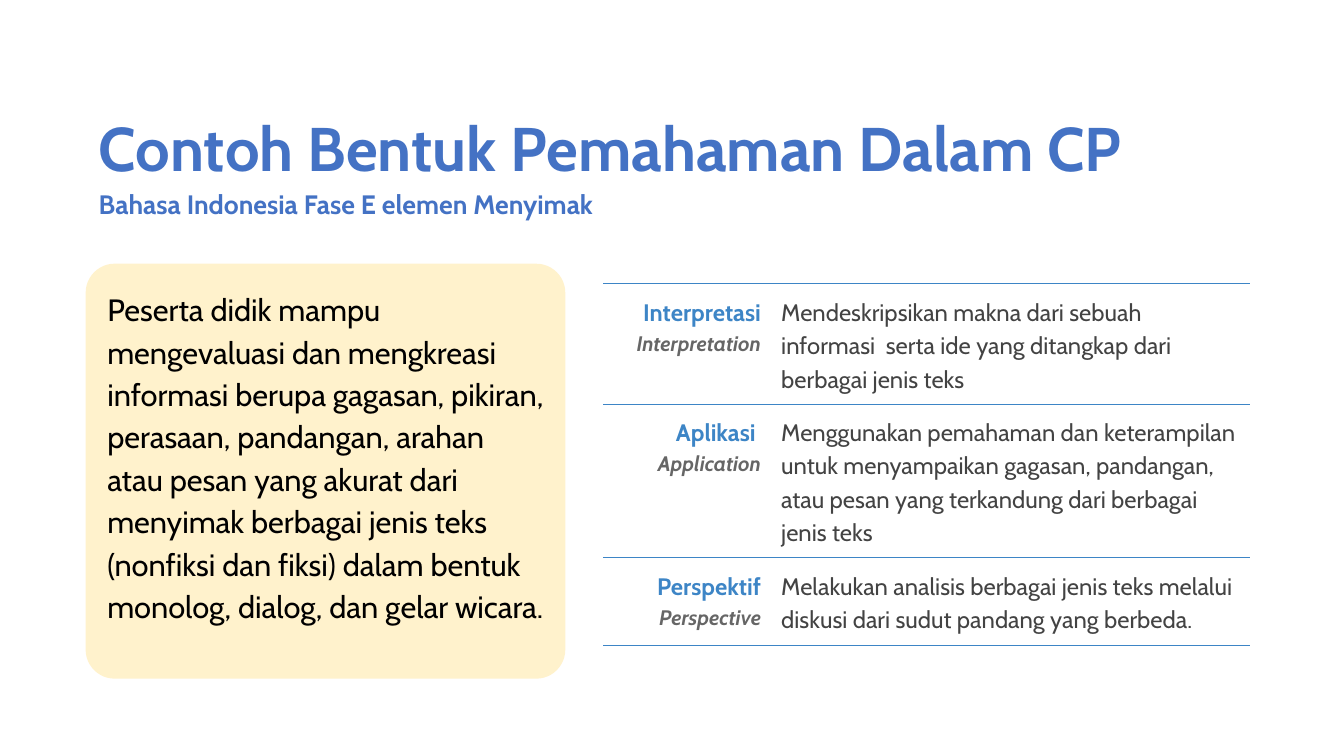
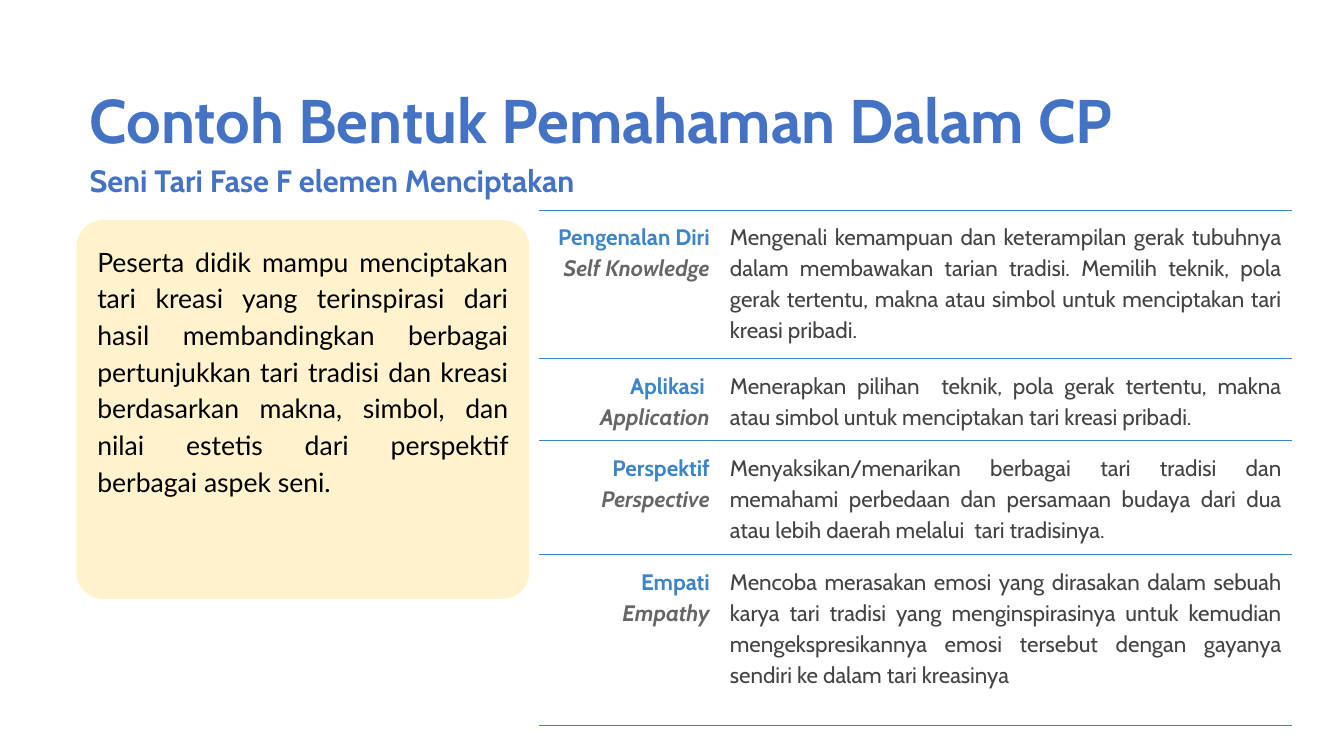
"""Two slides pairing a learning outcome with a table of its forms of understanding."""
from lxml.etree import SubElement
from pptx import Presentation
from pptx.dml.color import RGBColor
from pptx.enum.shapes import MSO_SHAPE
from pptx.enum.text import MSO_ANCHOR, PP_ALIGN
from pptx.oxml import parse_xml
from pptx.oxml.ns import nsdecls, qn
from pptx.util import Inches, Pt

TITLE_BLUE = RGBColor(0x44, 0x72, 0xC4)
LABEL_BLUE = RGBColor(0x3D, 0x85, 0xC6)
CREAM = RGBColor(0xFF, 0xF2, 0xCC)
BLACK = RGBColor(0x00, 0x00, 0x00)
GRAY = RGBColor(0x66, 0x66, 0x66)
DARK_GRAY = RGBColor(0x43, 0x43, 0x43)

COLS, ROWS = 160, 90
HEADING = "Contoh Bentuk Pemahaman Dalam CP"


class Deck:
    def __init__(self):
        self.prs = Presentation()
        self.prs.slide_width, self.prs.slide_height = Inches(13.33), Inches(7.5)
        self.s = None

    def x(self, cols):
        return int(self.prs.slide_width * cols / COLS)

    def y(self, rows):
        return int(self.prs.slide_height * rows / ROWS)

    def area(self, left, top, width, height):
        return self.x(left), self.y(top), self.x(width), self.y(height)

    def new_slide(self):
        self.s = self.prs.slides.add_slide(self.prs.slide_layouts[6])

    def frame(self, sp):
        tf = sp.text_frame
        tf.word_wrap = True
        tf.vertical_anchor = MSO_ANCHOR.TOP
        tf.margin_left = tf.margin_right = tf.margin_top = tf.margin_bottom = Inches(0.13)
        return tf

    def set_text(self, p, text, size, color, bold=False, italic=False,
                 font="Cabin", align=PP_ALIGN.LEFT, spacing=1.15):
        p.text = text
        p.alignment = align
        p.line_spacing = spacing
        p.font.name, p.font.size = font, Pt(size)
        p.font.bold, p.font.italic = bold, italic
        p.font.color.rgb = color

    def title(self, area, subtitle, size):
        tf = self.frame(self.s.shapes.add_textbox(*self.area(*area)))
        self.set_text(tf.paragraphs[0], HEADING, 44, TITLE_BLUE, bold=True, spacing=1.0)
        self.set_text(tf.add_paragraph(), subtitle, size, TITLE_BLUE, bold=True)

    def outcome(self, area, text, size, font, align):
        sp = self.s.shapes.add_shape(MSO_SHAPE.ROUNDED_RECTANGLE, *self.area(*area))
        sp.adjustments[0] = 0.07
        sp.shadow.inherit = False
        sp.fill.solid()
        sp.fill.fore_color.rgb = CREAM
        sp.line.fill.background()
        p = self.frame(sp).paragraphs[0]
        self.set_text(p, text, size, BLACK, font=font, align=align)
        p.space_before = Pt(12)

    def rule(self, cell):
        tc_pr = cell._tc.get_or_add_tcPr()
        for i, side in enumerate(("lnL", "lnR", "lnT", "lnB")):
            ln = parse_xml(f'<a:{side} {nsdecls("a")} w="{Pt(0.75)}"/>')
            if side in ("lnT", "lnB"):
                fill = SubElement(ln, qn("a:solidFill"))
                SubElement(fill, qn("a:srgbClr"), val=str(LABEL_BLUE))
            else:
                SubElement(ln, qn("a:noFill"))
            tc_pr.insert(i, ln)

    def table(self, left, top, widths, heights, entries, size, term_size, align):
        area = self.area(left, top, sum(widths), sum(heights))
        table = self.s.shapes.add_table(len(heights), len(widths), *area).table
        table.first_row = table.horz_banding = False
        for col, width in zip(table.columns, widths):
            col.width = self.x(width)
        for row, height, (label, term, text) in zip(table.rows, heights, entries):
            row.height = self.y(height)
            for cell in row.cells:
                cell.margin_left = cell.margin_right = Inches(0.1)
                cell.margin_top = cell.margin_bottom = Inches(0.1)
                cell.fill.background()
                self.rule(cell)
            name, detail = (cell.text_frame for cell in row.cells)
            self.set_text(name.paragraphs[0], label, size, LABEL_BLUE,
                          bold=True, align=PP_ALIGN.RIGHT)
            self.set_text(name.add_paragraph(), term, term_size, GRAY,
                          bold=True, italic=True, align=PP_ALIGN.RIGHT)
            self.set_text(detail.paragraphs[0], text, size, DARK_GRAY, align=align)


def listening_slide(deck):
    deck.new_slide()
    deck.title((10.2, 11.5, 126.1, 6.6), "Bahasa Indonesia Fase E elemen Menyimak", 19)
    deck.table(71.8, 33.8, (20, 57), (14.3, 18.3, 10.4), [
        ("Interpretasi", "Interpretation",
         "Mendeskripsikan makna dari sebuah informasi  serta ide yang ditangkap "
         "dari berbagai jenis teks"),
        ("Aplikasi ", "Application",
         "Menggunakan pemahaman dan keterampilan untuk menyampaikan gagasan, "
         "pandangan, atau pesan yang terkandung dari berbagai jenis teks"),
        ("Perspektif", "Perspective",
         "Melakukan analisis berbagai jenis teks melalui diskusi dari sudut "
         "pandang yang berbeda."),
    ], 17, 15, PP_ALIGN.LEFT)
    deck.outcome(
        (10.2, 31.4, 57.1, 49.4),
        "Peserta didik mampu mengevaluasi dan mengkreasi informasi berupa gagasan, "
        "pikiran, perasaan, pandangan, arahan atau pesan yang akurat dari menyimak "
        "berbagai jenis teks (nonfiksi dan fiksi) dalam bentuk monolog, dialog, dan "
        "gelar wicara.", 22, "Cabin", PP_ALIGN.LEFT)


def dance_slide(deck):
    deck.new_slide()
    deck.title((9.1, 8.2, 131.3, 10), "Seni Tari Fase F elemen Menciptakan", 22)
    deck.table(64.2, 25, (21.5, 68.1), (17.7, 9.7, 13.6, 20.3), [
        ("Pengenalan Diri", "Self Knowledge",
         "Mengenali kemampuan dan keterampilan gerak tubuhnya dalam membawakan "
         "tarian tradisi. Memilih teknik, pola gerak tertentu, makna atau simbol "
         "untuk menciptakan tari kreasi pribadi."),
        ("Aplikasi ", "Application",
         "Menerapkan pilihan  teknik, pola gerak tertentu, makna atau simbol untuk "
         "menciptakan tari kreasi pribadi."),
        ("Perspektif", "Perspective",
         "Menyaksikan/menarikan berbagai tari tradisi dan memahami perbedaan dan "
         "persamaan budaya dari dua atau lebih daerah melalui  tari tradisinya."),
        ("Empati", "Empathy",
         "Mencoba merasakan emosi yang dirasakan dalam sebuah karya tari tradisi "
         "yang menginspirasinya untuk kemudian mengekspresikannya emosi tersebut "
         "dengan gayanya sendiri ke dalam tari kreasinya"),
    ], 16, 16, PP_ALIGN.JUSTIFY)
    deck.outcome(
        (9.1, 26.2, 53.9, 45.1),
        "Peserta didik mampu menciptakan tari kreasi yang terinspirasi dari hasil "
        "membandingkan berbagai pertunjukkan tari tradisi dan kreasi berdasarkan "
        "makna, simbol, dan nilai estetis dari perspektif berbagai aspek seni.",
        19, "Lato", PP_ALIGN.JUSTIFY)


def main():
    deck = Deck()
    listening_slide(deck)
    dance_slide(deck)
    deck.prs.save("out.pptx")


if __name__ == "__main__":
    main()
